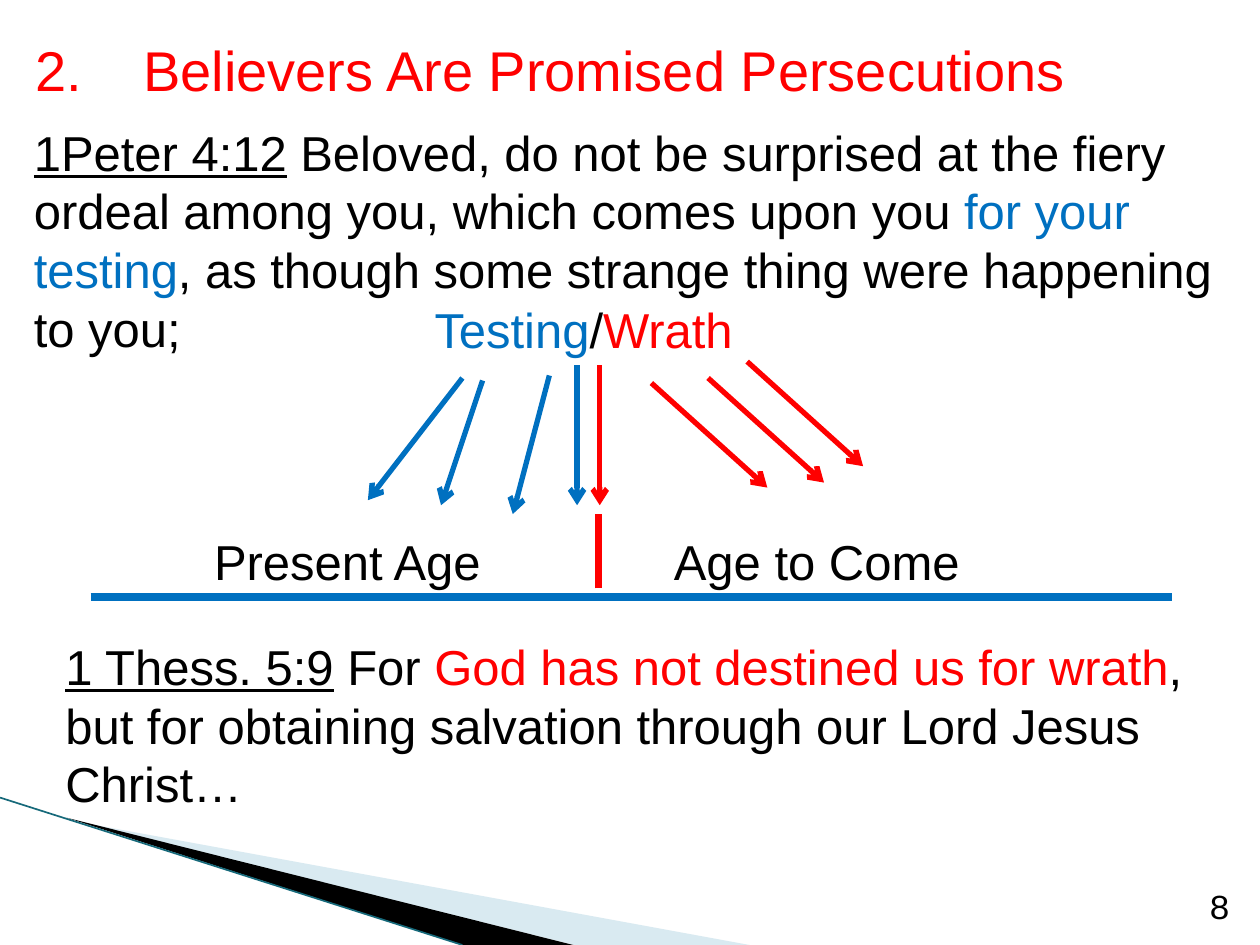
from lxml.etree import SubElement
from pptx import Presentation
from pptx.dml.color import RGBColor
from pptx.enum.shapes import MSO_CONNECTOR
from pptx.enum.text import MSO_ANCHOR, PP_ALIGN
from pptx.oxml.ns import qn
from pptx.util import Inches, Pt

BLACK = RGBColor(0x00, 0x00, 0x00)
RED = RGBColor(0xFF, 0x00, 0x00)
BLUE = RGBColor(0x00, 0x70, 0xC0)
TEAL = RGBColor(0x16, 0x69, 0x7A)
PALE_BLUE = RGBColor(0xA0, 0xCB, 0xDC)

presentation = Presentation()
presentation.slide_width = Inches(10)
presentation.slide_height = Inches(7.5)
slide = presentation.slides.add_slide(presentation.slide_layouts[6])


def add_text(box, runs, size=28, anchor=MSO_ANCHOR.TOP, font_name="Arial"):
    """Add a one-paragraph text box from (text, colour, underline) runs."""
    frame = slide.shapes.add_textbox(*map(Inches, box)).text_frame
    frame.word_wrap = True
    frame.vertical_anchor = anchor
    paragraph = frame.paragraphs[0]
    for text, color, underline in runs:
        run = paragraph.add_run()
        run.text = text
        run.font.color.rgb = color
        if underline:
            run.font.underline = True
    paragraph.font.size = Pt(size)
    paragraph.font.name = font_name
    for run in paragraph.runs:
        run.font.size = Pt(size)
        run.font.name = font_name
    return paragraph


def add_line(start, end, color, width, arrow=False):
    connector = slide.shapes.add_connector(
        MSO_CONNECTOR.STRAIGHT, *map(Inches, (*start, *end)))
    connector.line.color.rgb = color
    connector.line.width = Pt(width)
    if arrow:
        SubElement(connector.line._get_or_add_ln(), qn("a:tailEnd"), type="arrow")
    SubElement(connector._element.spPr, qn("a:effectLst"))


# Corner decoration
wedges = [
    ([(0.55, 6.51), (5.95, 7.5), (4.56, 7.5)], PALE_BLUE, 40),
    ([(0.53, 6.49), (4.55, 7.5), (3.67, 7.5)], BLACK, 100),
]
for points, color, opacity in wedges:
    corners = [(Inches(x), Inches(y)) for x, y in points]
    builder = slide.shapes.build_freeform(*corners[0])
    builder.add_line_segments(corners[1:], close=True)
    wedge = builder.convert_to_shape()
    wedge.shadow.inherit = False
    wedge.line.fill.background()
    wedge.fill.solid()
    wedge.fill.fore_color.rgb = color
    if opacity < 100:
        color_element = wedge._element.spPr.find(".//" + qn("a:srgbClr"))
        SubElement(color_element, qn("a:alpha"), val=str(opacity * 1000))
add_line((0, 6.33), (3.67, 7.5), TEAL, 0.95)

# Title, with the heading set off from its number by a tab stop
title = add_text((0.18, 0.08, 9.67, 0.93),
                 [("2.\tBelievers Are Promised Persecutions", RED, False)],
                 size=32, anchor=MSO_ANCHOR.MIDDLE)
tab_list = SubElement(title._p.get_or_add_pPr(), qn("a:tabLst"))
title._p.pPr.insert(0, tab_list)
SubElement(tab_list, qn("a:tab"), pos=str(Inches(0.86)), algn="l")

# Timeline of the two ages
add_line((0.72, 4.74), (9.3, 4.74), BLUE, 4.5)
add_line((4.75, 4.67), (4.75, 4.08), RED, 4.5)
add_text((1.6, 4.17, 2.65, 0.57), [("Present Age", BLACK, False)])
add_text((5.25, 4.17, 3.15, 0.57), [("Age to Come", BLACK, False)])

# Testing falls on the present age, wrath on the age to come
add_text((3.35, 2.33, 2.75, 0.57),
         [("Testing", BLUE, False), ("/", BLACK, False), ("Wrath", RED, False)])
for x, y in [(5.17, 3.04), (5.62, 3), (5.93, 2.87)]:
    add_line((x, y), (x + 0.92, y + 0.83), RED, 3, arrow=True)
add_line((4.76, 2.9), (4.76, 4.01), RED, 3, arrow=True)
testing_arrows = [
    ((4.58, 2.9), (4.58, 4.01)),
    ((4.36, 2.98), (4.07, 4.08)),
    ((3.83, 3.02), (3.5, 4.01)),
    ((3.67, 3), (2.92, 3.97)),
]
for start, end in testing_arrows:
    add_line(start, end, BLUE, 3, arrow=True)

# Scripture passages
add_text((0.17, 0.92, 9.58, 1.99), [
    ("1Peter 4:12", BLACK, True),
    (" Beloved, do not be surprised at the fiery ordeal among you, "
     "which comes upon you ", BLACK, False),
    ("for your testing", BLUE, False),
    (", as though some strange thing were happening to you;", BLACK, False),
])
add_text((0.42, 5, 9.58, 1.51), [
    ("1 Thess. 5:9", BLACK, True),
    (" For ", BLACK, False),
    ("God has not destined us for wrath", RED, False),
    (", but for obtaining salvation through our Lord Jesus Christ…", BLACK, False),
])

page_number = add_text((9.17, 6.83, 0.69, 0.57), [("8", BLACK, False)],
                       size=20, anchor=MSO_ANCHOR.BOTTOM, font_name="Courier New")
page_number.alignment = PP_ALIGN.RIGHT

presentation.save("out.pptx")
